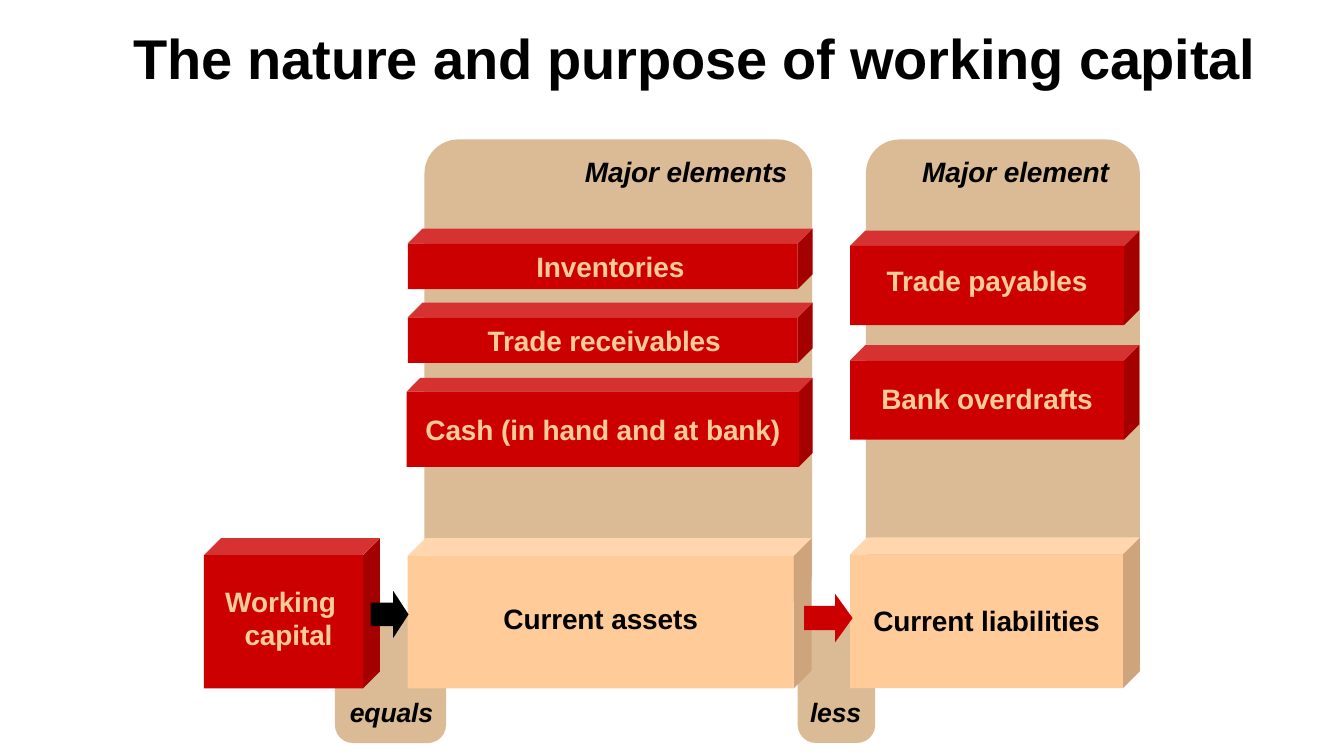
import pptx
import pptx.dml.color
import pptx.enum.shapes
import pptx.enum.text
import pptx.util

Pt = pptx.util.Pt
Align = pptx.enum.text.PP_ALIGN
Preset = pptx.enum.shapes.MSO_SHAPE

COLOURS = {
    "black": "000000",
    "tan": "DBBB95",
    "red": "CC0000", "red top": "D63232", "red side": "A40000",
    "peach": "FFCC99", "peach top": "FFD6AD", "peach side": "CDA47B",
}


def colour(name):
    return pptx.dml.color.RGBColor.from_string(COLOURS[name])


class SlideBuilder:
    font = "Arial"

    def __init__(self, page):
        self.page = page

    def paint(self, shape, fill):
        shape.shadow.inherit = False
        shape.fill.solid()
        shape.fill.fore_color.rgb = colour(fill)
        shape.line.fill.background()
        return shape

    def set_text(self, shape, text, size=20, ink="black", italic=False, wrap=True,
                 align=Align.CENTER, shift=0, rise=0, indent=0, hanging=0):
        """Put bold text in a shape, moved right by shift and up by rise."""
        frame = shape.text_frame
        frame.word_wrap = wrap
        frame.vertical_anchor = pptx.enum.text.MSO_ANCHOR.MIDDLE
        frame.margin_left, frame.margin_right = Pt(2 * shift), 0
        frame.margin_top, frame.margin_bottom = 0, Pt(2 * rise)
        para = frame.paragraphs[0]
        para.alignment = align
        if indent:
            properties = para._p.get_or_add_pPr()
            properties.set("marL", str(Pt(indent)))
            properties.set("indent", str(Pt(-hanging)))
        span = para.add_run()
        span.text = text
        span.font.name = self.font
        span.font.size = Pt(size)
        span.font.bold = True
        span.font.italic = italic
        span.font.color.rgb = colour(ink)
        span._r.get_or_add_rPr().set("spc", "-10")

    def label(self, text, left, top, width, height, **style):
        box = self.page.shapes.add_textbox(Pt(left), Pt(top), Pt(width), Pt(height))
        self.set_text(box, text, wrap=False, **style)

    def preset(self, kind, left, top, width, height, fill):
        shape = self.page.shapes.add_shape(kind, Pt(left), Pt(top), Pt(width), Pt(height))
        return self.paint(shape, fill)

    def panel(self, left, top, width, height, radius):
        shape = self.preset(Preset.ROUNDED_RECTANGLE, left, top, width, height, "tan")
        shape.adjustments[0] = radius / min(width, height)

    def arrow(self, left, top, width, height, head, fill):
        shape = self.preset(Preset.RIGHT_ARROW, left, top, width, height, fill)
        shape.adjustments[0] = 0.5
        shape.adjustments[1] = head / min(width, height)

    def face(self, points, fill):
        corners = [(Pt(x), Pt(y)) for x, y in points]
        builder = self.page.shapes.build_freeform(*corners[0])
        builder.add_line_segments(corners[1:], close=True)
        self.paint(builder.convert_to_shape(), fill)

    def block(self, text, left, top, width, height, depth, fill, **style):
        """Draw a solid block with a front, a top and a right side."""
        right, bottom = left + width, top + height
        edge, brow = right - depth, top + depth
        self.face([(right, top), (edge, brow), (edge, bottom), (right, bottom - depth)],
                  fill + " side")
        self.face([(right, top), (left + depth, top), (left, brow), (edge, brow)],
                  fill + " top")
        front = self.preset(Preset.RECTANGLE, left, brow, width - depth, height - depth, fill)
        ink = "peach" if fill == "red" else "black"
        self.set_text(front, text, ink=ink, **style)


def main():
    deck = pptx.Presentation()
    deck.slide_width, deck.slide_height = Pt(960), Pt(540)
    slide = SlideBuilder(deck.slides.add_slide(deck.slide_layouts[6]))

    slide.label("The nature and purpose of working capital", 93.6, 16, 805, 50, size=40)

    slide.panel(303.2, 99.6, 277, 333.3, 24.4)
    slide.panel(618.6, 99.6, 195.6, 314, 24)
    slide.panel(569.8, 440.7, 55.4, 90, 13)
    slide.panel(239.2, 439.8, 79.4, 91, 13)

    slide.label("Major elements", 416.2, 109.5, 147.6, 26, italic=True)
    slide.label("Major element", 657.4, 109.5, 136, 26, italic=True)
    slide.label("less", 577.4, 496.2, 39, 24.5, size=19, italic=True)
    slide.label("equals", 248.4, 496.5, 62.6, 24.5, size=19, italic=True)

    assets = [("Inventories", 5.4), ("Trade receivables", 1)]
    for row, (text, shift) in enumerate(assets):
        slide.block(text, 291.3, 163.3 + 52.8 * row, 289.2, 43.2, 10.6, "red", shift=shift)
    slide.block("Cash (in hand and at bank)", 290.4, 270, 290, 63.5, 9.8, "red")

    liabilities = [("Trade payables", 3.5), ("Bank overdrafts", 1)]
    for row, (text, rise) in enumerate(liabilities):
        slide.block(text, 607.2, 164.7 + 81.8 * row, 206.6, 67.5, 10.9, "red", rise=rise)

    slide.block("Current liabilities", 607.2, 383.8, 207.1, 107.8, 12.2, "peach", rise=1)
    slide.block("Working capital", 145.7, 384.4, 125.7, 107.4, 12.2, "red", rise=3,
                align=Align.LEFT, indent=29, hanging=13.8)
    slide.block("Current assets", 291.2, 384.4, 288.5, 107.4, 12.8, "peach", rise=3)

    slide.arrow(264.8, 422, 27, 33.8, 11, "black")
    slide.arrow(574.4, 424.3, 34.6, 34.4, 12.4, "red")

    deck.save("out.pptx")


if __name__ == "__main__":
    main()
